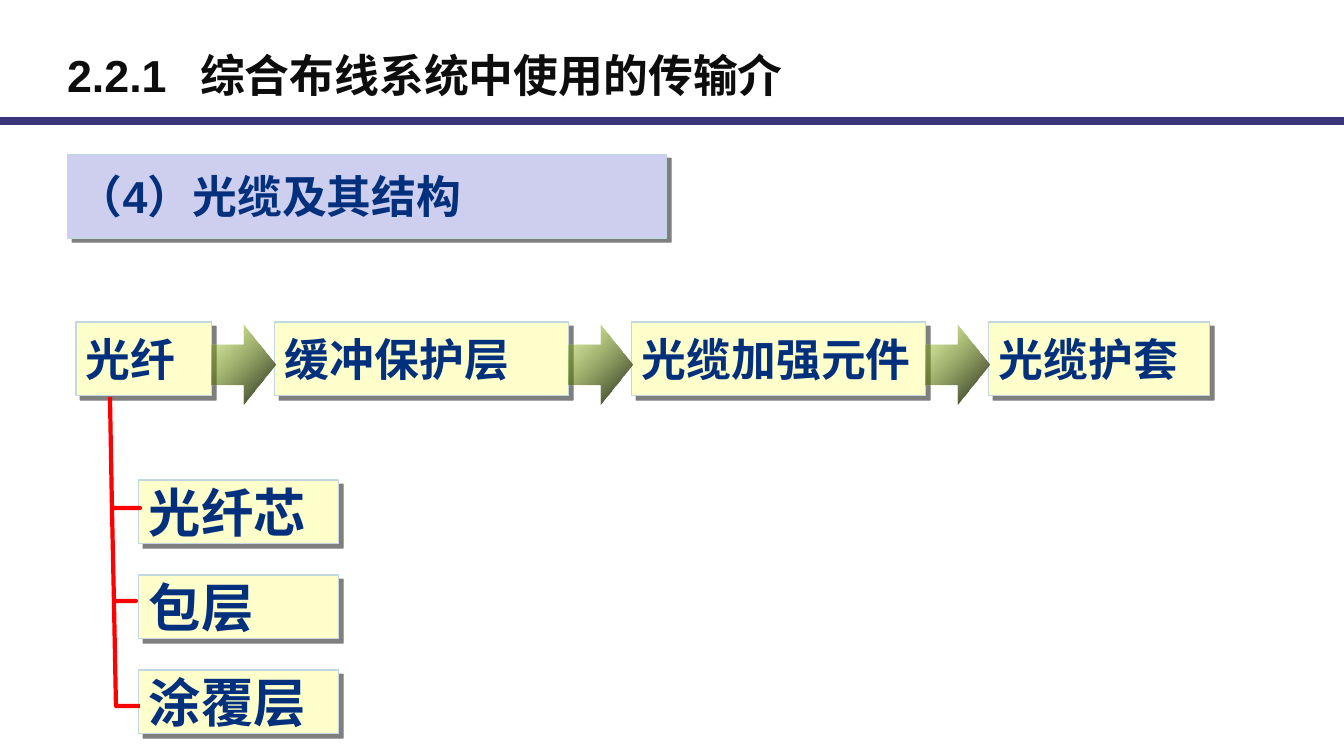
from lxml import etree
from pptx import Presentation
from pptx import util as u
from pptx.dml.color import RGBColor
from pptx.enum import shapes, text
from pptx.oxml.ns import qn

# Content
TITLE = "2.2.1\t综合布线系统中使用的传输介"
TOPIC = "（4）光缆及其结构"
CABLE_LAYERS = [("光纤", 136, "Noto Sans CJK SC"), ("缓冲保护层", 294, "Arial"),
                ("光缆加强元件", 294, "Arial"), ("光缆护套", 221, "Arial")]
FIBRE_PARTS = ["光纤芯", "包层", "涂覆层"]
BRANCH_POINTS = [(110, 397), (112, 508), (140, 508), (112, 508), (114, 601),
                 (136, 601), (114, 601), (116, 706), (140, 706)]

COLORS = {"title": "0D0D0D", "rule": "3A357B", "topic": "CECEEF", "box": "FFFFCC",
          "edge": "C3D7E1", "text": "02307C", "shadow": "000000",
          "arrow_start": "99CC00", "arrow_end": "000000", "branch": "FF0000"}
EAST_ASIAN_FONT = "Noto Sans CJK SC"

# Layout in px
SLIDE_W, SLIDE_H = 1344, 756
LAYER_LEFT, LAYER_TOP, LAYER_H, LAYER_GAP = 76, 322, 74, 63
ARROW_TOP, ARROW_H = 325, 80
PART_LEFT, PART_TOP, PART_W, PART_H, PART_STEP = 139, 480, 200, 64, 95
TITLE_TAB = 133


def px(n):
    return u.Emu(round(n * 914400 / 100.8))


def color(name):
    return RGBColor.from_string(COLORS[name])


def write(frame, words, size, name, face="Arial"):
    frame.word_wrap = True
    frame.auto_size = text.MSO_AUTO_SIZE.NONE
    frame.vertical_anchor = text.MSO_ANCHOR.MIDDLE
    paragraph = frame.paragraphs[0]
    paragraph.alignment = text.PP_ALIGN.LEFT
    for i, piece in enumerate(words.split("\t")):
        run = paragraph.add_run()
        run.text = "\t" + piece if i else piece
        run.font.size = u.Pt(size)
        run.font.bold = True
        run.font.color.rgb = color(name)
        run.font.name = face
        east_asian = etree.SubElement(run.font._element, qn("a:ea"))
        east_asian.set("typeface", EAST_ASIAN_FONT)
    return paragraph


def add_box(slide, words, left, top, width, height, fill="box", size=32, face="Arial"):
    box = slide.shapes.add_shape(shapes.MSO_SHAPE.RECTANGLE,
                                 px(left), px(top), px(width), px(height))
    box.fill.solid()
    box.fill.fore_color.rgb = color(fill)
    box.line.color.rgb = color("edge")
    box.line.width = u.Pt(0.75)
    box.shadow.inherit = False
    effects = box._element.spPr.find(qn("a:effectLst"))
    shadow = etree.SubElement(effects, qn("a:outerShdw"), blurRad="0",
                              dist=str(u.Pt(4.2)), dir="2700000",
                              algn="ctr", rotWithShape="0")
    shade = etree.SubElement(shadow, qn("a:srgbClr"), val=COLORS["shadow"])
    etree.SubElement(shade, qn("a:alpha"), val="50000")
    write(box.text_frame, words, size, "text", face)


def add_arrow(slide, left):
    arrow = slide.shapes.add_shape(shapes.MSO_SHAPE.RIGHT_ARROW,
                                   px(left), px(ARROW_TOP), px(LAYER_GAP), px(ARROW_H))
    arrow.shadow.inherit = False
    arrow.line.fill.background()
    arrow.fill.gradient()
    arrow.fill.gradient_angle = 315
    for stop, name in zip(arrow.fill.gradient_stops, ("arrow_start", "arrow_end")):
        stop.color.rgb = color(name)
    tints = arrow._element.spPr.iter(qn("a:srgbClr"))
    for tint, alpha in zip(list(tints), ("32000", "90000")):
        etree.SubElement(tint, qn("a:alpha"), val=alpha)


def main():
    prs = Presentation()
    prs.slide_width, prs.slide_height = px(SLIDE_W), px(SLIDE_H)
    slide = prs.slides.add_slide(prs.slide_layouts[5])

    # Title and the rule below it
    title = slide.shapes.title
    title.left, title.top, title.width, title.height = px(57), px(43), px(1016), px(63)
    heading = write(title.text_frame, TITLE, 32, "title")
    tabs = etree.SubElement(heading._p.get_or_add_pPr(), qn("a:tabLst"))
    etree.SubElement(tabs, qn("a:tab"), pos=str(px(TITLE_TAB)), algn="l")
    rule = slide.shapes.add_connector(shapes.MSO_CONNECTOR.STRAIGHT,
                                      px(0), px(121), px(SLIDE_W), px(121))
    rule.line.color.rgb = color("rule")
    rule.line.width = u.Pt(5.75)
    etree.SubElement(rule._element.spPr, qn("a:effectLst"))

    # Topic
    add_box(slide, TOPIC, 68, 154, 599, 84, fill="topic")

    # Cable layers, with an arrow filling each gap
    left, arrow_lefts = LAYER_LEFT, []
    for words, width, face in CABLE_LAYERS:
        add_box(slide, words, left, LAYER_TOP, width, LAYER_H, face=face)
        arrow_lefts.append(left + width)
        left += width + LAYER_GAP
    for arrow_left in arrow_lefts[:-1]:
        add_arrow(slide, arrow_left)

    # Parts of the fibre
    for i, words in enumerate(FIBRE_PARTS):
        add_box(slide, words, PART_LEFT, PART_TOP + i * PART_STEP, PART_W, PART_H, size=37.4)

    # Branch from the fibre to its parts
    start, *rest = [(px(x), px(y)) for x, y in BRANCH_POINTS]
    builder = slide.shapes.build_freeform(*start)
    builder.add_line_segments(rest, close=False)
    branch = builder.convert_to_shape()
    branch.shadow.inherit = False
    branch.fill.background()
    branch.line.color.rgb = color("branch")
    branch.line.width = u.Pt(3)

    prs.save("out.pptx")


if __name__ == "__main__":
    main()
